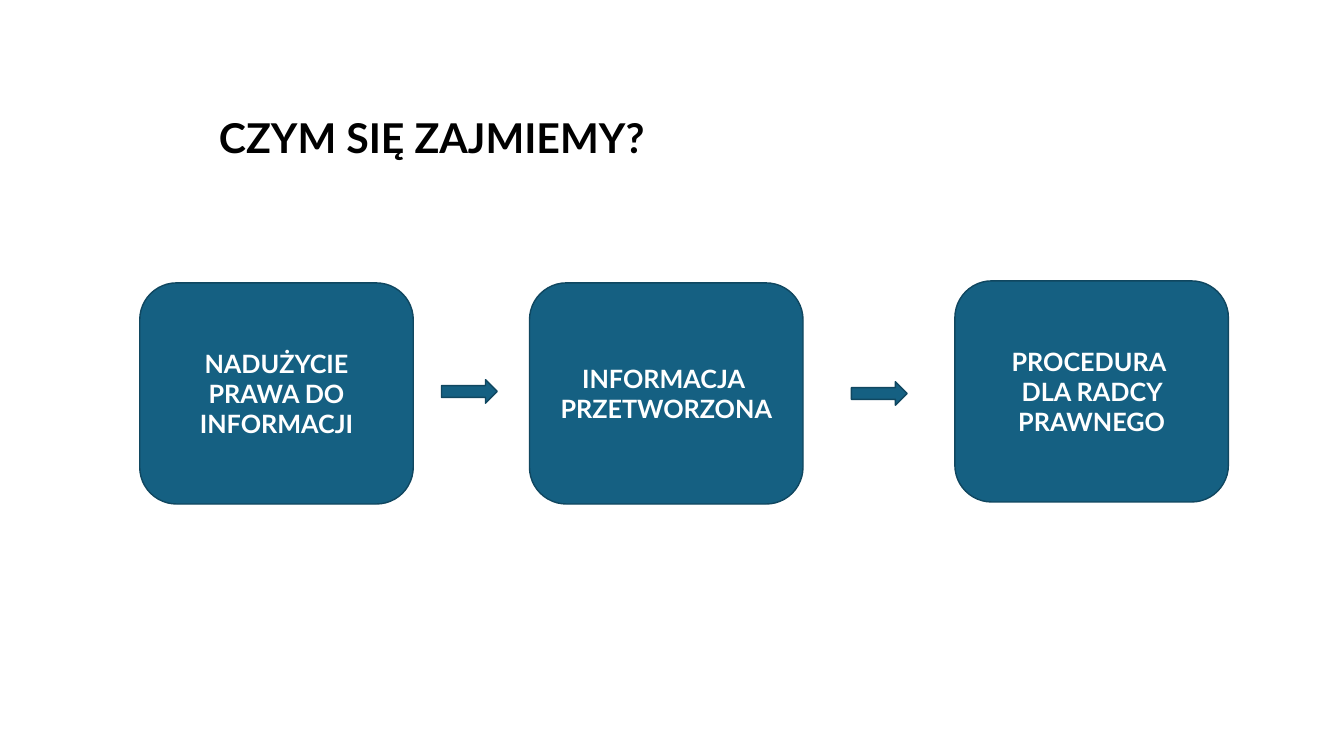
from pptx import Presentation
from pptx.dml.color import RGBColor
from pptx.enum import shapes, text
from pptx.util import Inches, Pt

TEAL = RGBColor(0x15, 0x60, 0x82)
EDGE = RGBColor(0x10, 0x47, 0x60)
BLACK = RGBColor(0, 0, 0)
WHITE = RGBColor(255, 255, 255)

STEPS = [
    (2.08, 4.21, ["NADUŻYCIE PRAWA DO INFORMACJI"]),
    (7.88, 4.21, ["INFORMACJA ", "PRZETWORZONA"]),
    (14.21, 4.18, ["PROCEDURA ", "DLA RADCY PRAWNEGO"]),
]
ARROWS = [(6.57, 5.65), (12.67, 5.68)]


def write(shape, lines, size, color, align):
    frame = shape.text_frame
    frame.word_wrap = True
    frame.vertical_anchor = text.MSO_ANCHOR.MIDDLE
    for i, line in enumerate(lines):
        para = frame.paragraphs[0] if i == 0 else frame.add_paragraph()
        para.alignment = align
        run = para.add_run()
        run.text = line
        run.font.name = "Lato"
        run.font.size = Pt(size)
        run.font.bold = True
        run.font.color.rgb = color


def add_title(slide, left, top, width, height):
    box = slide.shapes.add_textbox(
        Inches(left), Inches(top), Inches(width), Inches(height))
    write(box, ["CZYM SIĘ ZAJMIEMY?"], 44, BLACK, text.PP_ALIGN.LEFT)
    box.text_frame.paragraphs[0].line_spacing = 0.9


def add_block(slide, kind, left, top, width, height):
    block = slide.shapes.add_shape(
        kind, Inches(left), Inches(top), Inches(width), Inches(height))
    block.shadow.inherit = False
    block.fill.solid()
    block.fill.fore_color.rgb = TEAL
    block.line.color.rgb = EDGE
    block.line.width = Pt(1.5)
    return block


def add_flow(slide):
    for left, top in ARROWS:
        add_block(slide, shapes.MSO_SHAPE.RIGHT_ARROW, left, top, 0.83, 0.35)
    for left, top, lines in STEPS:
        step = add_block(
            slide, shapes.MSO_SHAPE.ROUNDED_RECTANGLE, left, top, 4.07, 3.29)
        write(step, lines, 27, WHITE, text.PP_ALIGN.CENTER)


def main():
    deck = Presentation()
    deck.slide_width = Inches(20)
    deck.slide_height = Inches(11.25)
    slide = deck.slides.add_slide(deck.slide_layouts[6])
    add_title(slide, 3.16, 0.55, 13.5, 3.07)
    add_flow(slide)
    deck.save("out.pptx")


if __name__ == "__main__":
    main()
